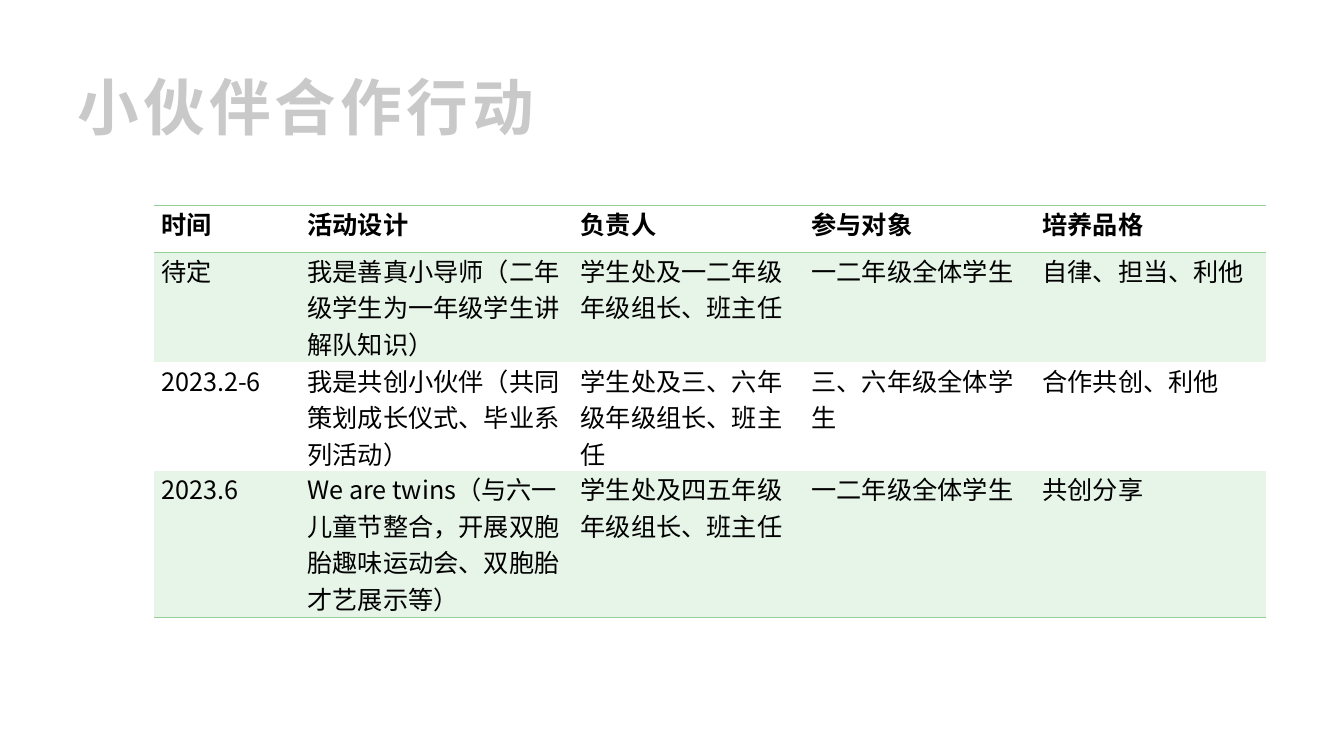
import pptx
import pptx.dml.color
import pptx.enum.text
import pptx.oxml
import pptx.oxml.ns
import pptx.util

PX = 9144  # EMU per px, 100 px to the inch
FONT = "Noto Sans CJK SC"
TITLE_FONT = "Noto Sans CJK JP"
COLORS = {
    "title": "C9C9C9",
    "text": "000000",
    "plain": "FFFFFF",
    "band": "E7F4E8",
    "rule": "94CE98",
}
COLUMNS = [145, 271, 229, 229, 229]
ROW_HEIGHTS = [46, 109, 108, 145]
ACTIVITIES = [
    ["时间", "活动设计", "负责人", "参与对象", "培养品格"],
    ["待定", "我是善真小导师（二年级学生为一年级学生讲解队知识）",
     "学生处及一二年级年级组长、班主任", "一二年级全体学生", "自律、担当、利他"],
    ["2023.2-6", "我是共创小伙伴（共同策划成长仪式、毕业系列活动）",
     "学生处及三、六年级年级组长、班主任", "三、六年级全体学生", "合作共创、利他"],
    ["2023.6", "We are twins（与六一儿童节整合，开展双胞胎趣味运动会、双胞胎才艺展示等）",
     "学生处及四五年级年级组长、班主任", "一二年级全体学生", "共创分享"],
]


def px(n):
    return pptx.util.Emu(n * PX)


def rgb(name):
    return pptx.dml.color.RGBColor.from_string(COLORS[name])


def style_run(r, font, size, color, bold):
    r.font.name = font
    r.font.size = pptx.util.Pt(size)
    r.font.bold = bold
    r.font.color.rgb = rgb(color)
    ea = pptx.oxml.parse_xml(
        f'<a:ea {pptx.oxml.ns.nsdecls("a")} typeface="{font}"/>')
    r.font._element.find(pptx.oxml.ns.qn("a:latin")).addnext(ea)


def set_borders(cell, ruled):
    """Rule the named edges and clear the others."""
    tc_pr = cell._tc.get_or_add_tcPr()
    for i, edge in enumerate("LRTB"):
        if edge in ruled:
            fill = f'<a:solidFill><a:srgbClr val="{COLORS["rule"]}"/></a:solidFill>'
        else:
            fill = "<a:noFill/>"
        ln = f'<a:ln{edge} {pptx.oxml.ns.nsdecls("a")} w="6350">{fill}</a:ln{edge}>'
        tc_pr.insert(i, pptx.oxml.parse_xml(ln))


def add_title(s, text, left, top, width, height):
    tf = s.shapes.add_textbox(px(left), px(top), px(width), px(height)).text_frame
    tf.word_wrap = True
    tf.vertical_anchor = pptx.enum.text.MSO_ANCHOR.MIDDLE
    tf.text = text
    r = tf.paragraphs[0].runs[0]
    style_run(r, TITLE_FONT, 44, "title", True)
    r.font._element.set("spc", "300")


def add_activity_table(s, left, top):
    rows, cols = len(ACTIVITIES), len(COLUMNS)
    table = s.shapes.add_table(rows, cols, px(left), px(top),
                               px(sum(COLUMNS)), px(sum(ROW_HEIGHTS))).table
    table.horz_banding = False
    for column, width in zip(table.columns, COLUMNS):
        column.width = px(width)
    for row, height in zip(table.rows, ROW_HEIGHTS):
        row.height = px(height)

    # Rules enclose the header and close the last row
    ruled = {0: "TB", 1: "T", rows - 1: "B"}
    for i, texts in enumerate(ACTIVITIES):
        for j, text in enumerate(texts):
            cell = table.cell(i, j)
            cell.margin_left = cell.margin_right = px(7)
            cell.margin_top = cell.margin_bottom = 0
            cell.text_frame.text = text
            style_run(cell.text_frame.paragraphs[0].runs[0], FONT, 18, "text", i == 0)
            cell.fill.solid()
            cell.fill.fore_color.rgb = rgb("band" if i % 2 else "plain")
            set_borders(cell, ruled.get(i, ""))


def main():
    prs = pptx.Presentation()
    prs.slide_width, prs.slide_height = px(1333), px(750)
    s = prs.slides.add_slide(prs.slide_layouts[6])
    add_title(s, "小伙伴合作行动", 67, 67, 1200, 77)
    add_activity_table(s, 153, 204)
    prs.save("out.pptx")


if __name__ == "__main__":
    main()
